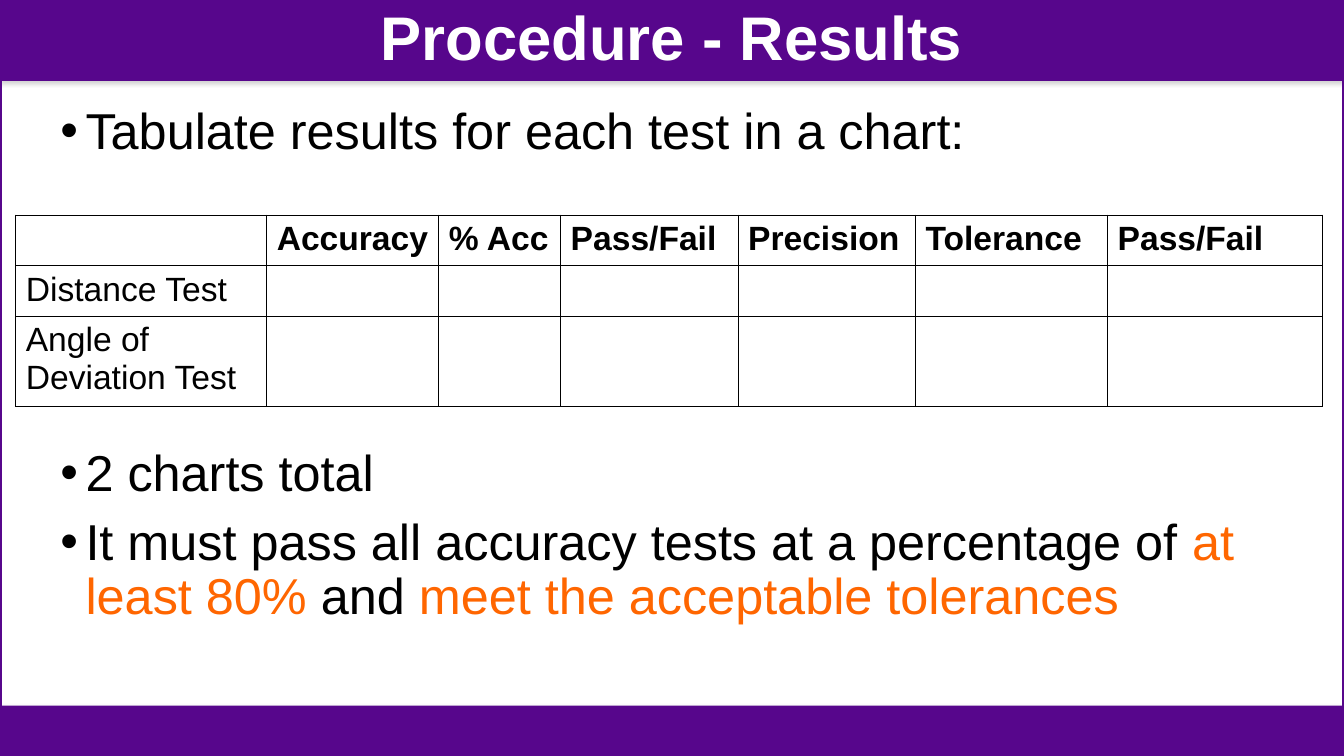
from lxml import etree
from pptx import Presentation
from pptx.dml.color import RGBColor
from pptx.enum.shapes import MSO_SHAPE
from pptx.enum.text import MSO_ANCHOR, MSO_AUTO_SIZE, PP_ALIGN
from pptx.oxml import parse_xml
from pptx.oxml.ns import nsdecls, qn
from pptx.util import Emu, Pt

PX = 9525
WIDTH, HEIGHT = 1280, 720
HEADER_HEIGHT, FOOTER_HEIGHT = 77, 48
RECTANGLE = MSO_SHAPE.RECTANGLE
MIDDLE = MSO_ANCHOR.MIDDLE
CENTER = PP_ALIGN.CENTER
NO_AUTOFIT = MSO_AUTO_SIZE.NONE
PURPLE, ORANGE, BLACK, WHITE = "57068C", "FF6600", "000000", "FFFFFF"

COLUMN_WIDTHS = [239, 164, 116, 169, 169, 183, 205]
ROW_HEIGHTS = [46, 45, 81]
RESULTS = [
    ["", "Accuracy", "% Acc", "Pass/Fail", "Precision", "Tolerance", "Pass/Fail"],
    ["Distance Test"] + [""] * 6,
    ["Angle of Deviation Test"] + [""] * 6,
]
INTRO = [[("Tabulate results for each test in a chart:", BLACK)]]
REQUIREMENTS = [
    [("2 charts total", BLACK)],
    [
        ("It must pass all accuracy tests at a percentage of ", BLACK),
        ("at least 80% ", ORANGE),
        ("and ", BLACK),
        ("meet the acceptable tolerances", ORANGE),
    ],
]


def px(*lengths):
    """Turn pixel lengths into EMU."""
    return [Emu(length * PX) for length in lengths]


def rgb(value):
    """Turn a hex string into a colour."""
    return RGBColor.from_string(value)


def add_run(paragraph, text, color, size, bold=False):
    """Add a formatted run to a paragraph."""
    run = paragraph.add_run()
    run.text = text
    for attribute, value in {"name": "Arial", "size": Pt(size), "bold": bold}.items():
        setattr(run.font, attribute, value)
    run.font.color.rgb = rgb(color)


def add_bar(slide, top, height):
    """Add a full-width purple bar with a soft shadow below it."""
    bar = slide.shapes.add_shape(RECTANGLE, *px(0, top, WIDTH, height))
    bar.fill.solid()
    bar.fill.fore_color.rgb = rgb(PURPLE)
    bar.line.fill.background()
    bar.element.spPr.append(parse_xml(
        f'<a:effectLst {nsdecls("a")}>'
        f'<a:outerShdw blurRad="{Pt(3.1)}" dist="{Pt(1.8)}" dir="5400000" rotWithShape="0">'
        '<a:srgbClr val="808080"><a:alpha val="35000"/></a:srgbClr>'
        '</a:outerShdw></a:effectLst>'
    ))


def add_border(slide):
    """Outline the whole slide in purple."""
    border = slide.shapes.add_shape(RECTANGLE, *px(0, 0, WIDTH, HEIGHT))
    border.shadow.inherit = False
    border.fill.background()
    border.line.color.rgb = rgb(PURPLE)
    border.line.width = Pt(2.25)


def set_title(slide, text):
    """Place the title over the header bar."""
    title = slide.shapes.title
    title.left, title.top, title.width, title.height = px(0, 0, WIDTH, HEADER_HEIGHT)
    title.element.getparent().append(title.element)
    frame = title.text_frame
    frame.auto_size = NO_AUTOFIT
    frame.vertical_anchor = MIDDLE
    heading = frame.paragraphs[0]
    heading.alignment = CENTER
    heading.line_spacing = 0.9
    add_run(heading, text, WHITE, 44, bold=True)


def add_bullets(slide, top, height, items):
    """Add a full-width bulleted list of coloured runs."""
    frame = slide.shapes.add_textbox(*px(0, top, WIDTH, height)).text_frame
    frame.word_wrap = True
    for index, runs in enumerate(items):
        bullet = frame.add_paragraph() if index else frame.paragraphs[0]
        properties = bullet._p.get_or_add_pPr()
        properties.set("marL", str(72 * PX))
        properties.set("indent", str(-24 * PX))
        etree.SubElement(properties, qn("a:buFont")).set("typeface", "Arial")
        etree.SubElement(properties, qn("a:buChar")).set("char", "•")
        bullet.line_spacing = 0.9
        bullet.space_before = Pt(10 if index else 0)
        for text, color in runs:
            add_run(bullet, text, color, 36)


def set_borders(cell):
    """Draw a thin black line on every side of a cell."""
    properties = cell._tc.get_or_add_tcPr()
    for index, side in enumerate(("lnL", "lnR", "lnT", "lnB")):
        properties.insert(index, parse_xml(
            f'<a:{side} {nsdecls("a")} w="{Pt(1)}"><a:solidFill>'
            f'<a:srgbClr val="{BLACK}"/></a:solidFill></a:{side}>'
        ))


def add_results_table(slide, left, top):
    """Add the table for test results."""
    table = slide.shapes.add_table(
        len(ROW_HEIGHTS), len(COLUMN_WIDTHS),
        *px(left, top, sum(COLUMN_WIDTHS), sum(ROW_HEIGHTS)),
    ).table
    table.first_row = table.horz_banding = False
    for column, width in zip(table.columns, px(*COLUMN_WIDTHS)):
        column.width = width
    for row, height in zip(table.rows, px(*ROW_HEIGHTS)):
        row.height = height
    for row_index, texts in enumerate(RESULTS):
        for column_index, text in enumerate(texts):
            cell = table.cell(row_index, column_index)
            cell.fill.background()
            set_borders(cell)
            if text:
                add_run(cell.text_frame.paragraphs[0], text, BLACK, 24, row_index == 0)


def main():
    """Build the results slide."""
    presentation = Presentation()
    presentation.slide_width, presentation.slide_height = px(WIDTH, HEIGHT)
    slide = presentation.slides.add_slide(presentation.slide_layouts[5])
    add_bar(slide, 0, HEADER_HEIGHT)
    add_border(slide)
    add_bar(slide, HEIGHT - FOOTER_HEIGHT, FOOTER_HEIGHT)
    set_title(slide, "Procedure - Results")
    add_bullets(slide, 96, 64, INTRO)
    add_results_table(slide, 15, 205)
    add_bullets(slide, 422, 190, REQUIREMENTS)
    presentation.save("out.pptx")


if __name__ == "__main__":
    main()
